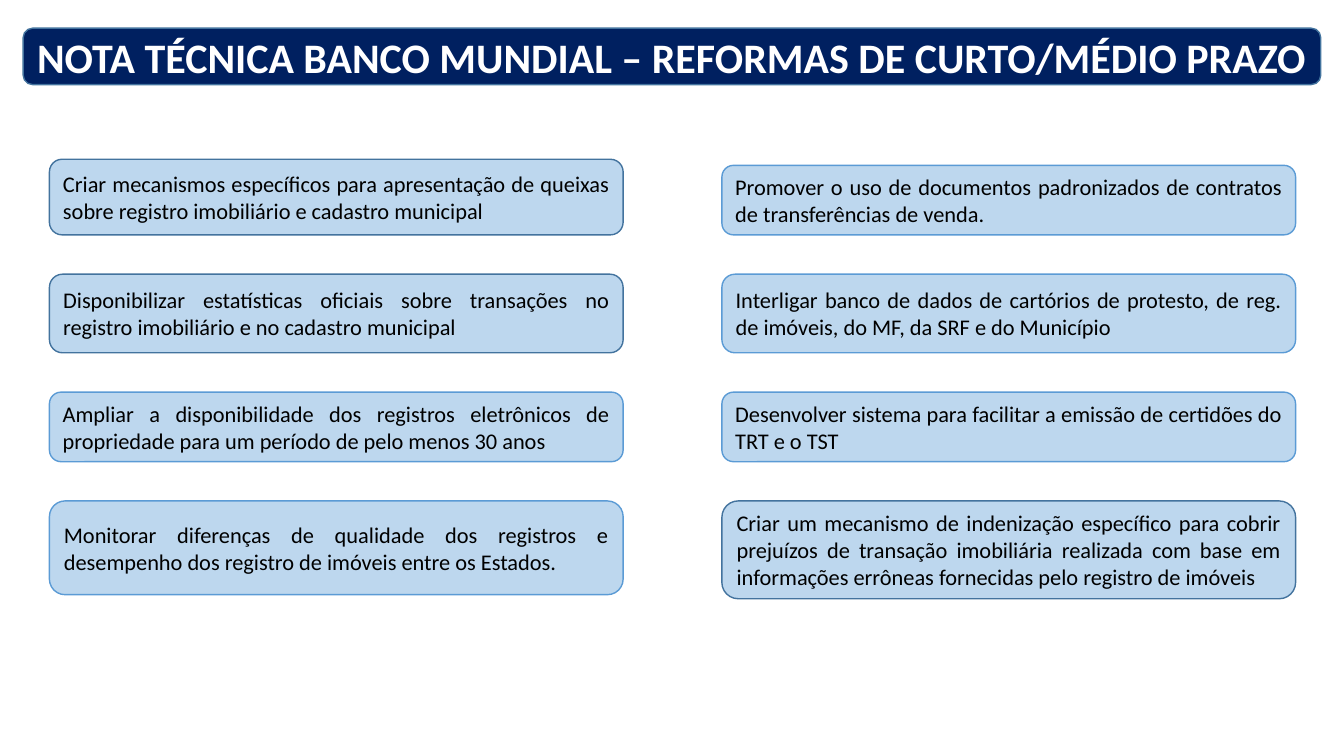
import pptx
import pptx.util
import pptx.dml.color
import pptx.enum.shapes
import pptx.enum.text

# Content: each row holds (text, height, line) for the left and right cards
TITLE = "NOTA TÉCNICA BANCO MUNDIAL – REFORMAS DE CURTO/MÉDIO PRAZO"
ROWS = [
    [("Criar mecanismos específicos para apresentação de queixas sobre registro "
      "imobiliário e cadastro municipal", 0.75, "dark"),
     ("Promover o uso de documentos padronizados de contratos de transferências "
      "de venda.", 0.69, "light")],
    [("Disponibilizar estatísticas oficiais sobre transações no registro "
      "imobiliário e no cadastro municipal", 0.78, "dark"),
     ("Interligar banco de dados de cartórios de protesto, de reg. de imóveis, "
      "do MF, da SRF e do Município", 0.78, "light")],
    [("Ampliar a disponibilidade dos registros eletrônicos de propriedade para "
      "um período de pelo menos 30 anos", 0.69, "light"),
     ("Desenvolver sistema para facilitar a emissão de certidões do TRT e o TST",
      0.69, "light")],
    [("Monitorar diferenças de qualidade dos registros e desempenho dos registro "
      "de imóveis entre os Estados.", 0.93, "light"),
     ("Criar um mecanismo de indenização específico para cobrir prejuízos de "
      "transação imobiliária realizada com base em informações errôneas "
      "fornecidas pelo registro de imóveis", 0.97, "dark")],
]

THEME = {
    "font": "Calibri", "title_size": 30, "card_size": 16,
    "title_fill": "002060", "card_fill": "BDD7EE",
    "title_text": "FFFFFF", "card_text": "000000",
    "dark": "43739E", "light": "5B9BD5",
}

# Grid in inches
SLIDE_W, SLIDE_H = 13.33, 7.5
TITLE_BOX = (0.23, 0.28, 12.87, 0.56)
LEFT, TOP, CARD_W = 0.49, 1.58, 5.69
COL_STEP, ROW_GAP = 6.67, 0.39

ALIGN = pptx.enum.text.PP_ALIGN


def rgb(name):
    return pptx.dml.color.RGBColor.from_string(THEME[name])


def write(tf, text, size, color, align, bold=False):
    tf.word_wrap = True
    tf.vertical_anchor = pptx.enum.text.MSO_ANCHOR.MIDDLE
    p = tf.paragraphs[0]
    p.alignment = align
    r = p.add_run()
    r.text = text
    r.font.name = THEME["font"]
    r.font.size = pptx.util.Pt(THEME[size])
    r.font.bold = bold
    r.font.color.rgb = rgb(color)


def add_box(s, box, fill, line):
    sp = s.shapes.add_shape(pptx.enum.shapes.MSO_SHAPE.ROUNDED_RECTANGLE,
                            *(pptx.util.Inches(v) for v in box))
    sp.shadow.inherit = False
    sp.fill.solid()
    sp.fill.fore_color.rgb = rgb(fill)
    sp.line.color.rgb = rgb(line)
    sp.line.width = pptx.util.Pt(1)
    return sp.text_frame


def main():
    prs = pptx.Presentation()
    prs.slide_width = pptx.util.Inches(SLIDE_W)
    prs.slide_height = pptx.util.Inches(SLIDE_H)
    s = prs.slides.add_slide(prs.slide_layouts[6])

    # Title bar
    write(add_box(s, TITLE_BOX, "title_fill", "dark"), TITLE,
          size="title_size", color="title_text", align=ALIGN.CENTER, bold=True)

    # Cards: the first row is aligned at the bottom, the others at the top
    y = TOP
    for i, row in enumerate(ROWS):
        row_h = max(h for _, h, _ in row)
        for col, (text, h, line) in enumerate(row):
            top = y + row_h - h if i == 0 else y
            tf = add_box(s, (LEFT + col * COL_STEP, top, CARD_W, h),
                         "card_fill", line)
            write(tf, text, size="card_size", color="card_text",
                  align=ALIGN.JUSTIFY)
        y += row_h + ROW_GAP

    prs.save("out.pptx")


if __name__ == "__main__":
    main()
